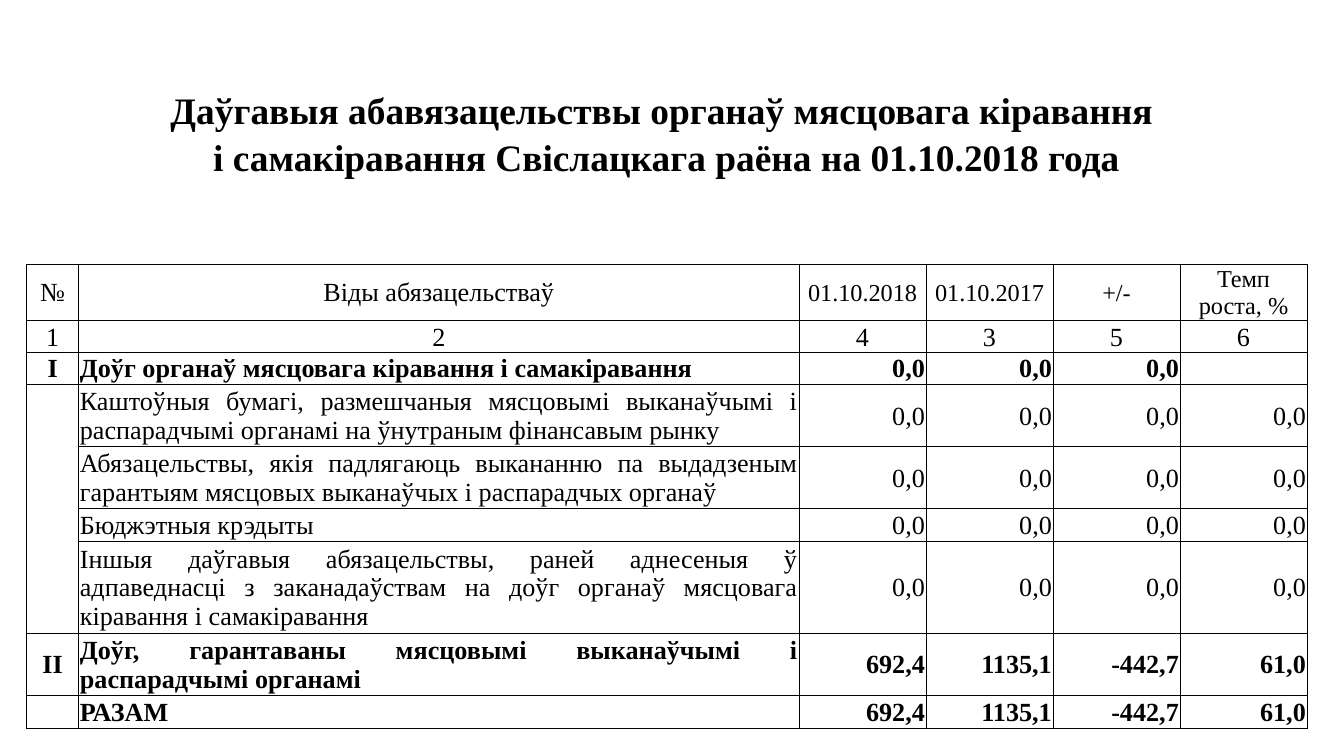
from dataclasses import dataclass

from lxml.etree import SubElement
from pptx import Presentation
from pptx.dml.color import RGBColor
from pptx.enum.text import MSO_ANCHOR as Anchor, PP_ALIGN as Align
from pptx.oxml.ns import qn
from pptx.util import Cm, Pt


@dataclass(frozen=True)
class Theme:
    font: str = "Times New Roman"
    ink: str = "000000"
    paper: str = "FFFFFF"
    title: int = 20
    body: int = 14
    heading: int = 13
    rule: float = 0.5
    plain_style: str = "{2D5ABB26-0587-4C30-8999-92F81FD0307C}"


THEME = Theme()

# Lengths in centimetres
COLS = [0.99, 13.61] + [2.4] * 4
TOP_ROWS = [0.97, 1.9, 0.97, 0.58]
DEBT_ROWS = [1.07, 0.59, 0.59, 1.17, 1.17, 0.59, 1.74, 1.17, 0.59]
TITLE_ROW, SHADED_ROW = 1, 2
HEADER_ROW = len(TOP_ROWS)
NUMBER_ROW, FIRST_ROW = HEADER_ROW + 1, HEADER_ROW + 2

TITLE = ("Даўгавыя абавязацельствы органаў мясцовага кіравання \n"
         "і самакіравання Свіслацкага раёна на 01.10.2018 года")
HEADERS = ["№", "Віды абязацельстваў", "01.10.2018", "01.10.2017", "+/-",
           "Темп\nроста, %"]
NUMBERS = ["1", "2", "4", "3", "5", "6"]
ZEROS = ["0,0"] * 4
TOTALS = ["692,4", "1135,1", "-442,7", "61,0"]
DEBTS = [
    ["I", "Доўг органаў мясцовага кіравання і самакіравання", *ZEROS[:3], ""],
    ["", "Каштоўныя бумагі, размешчаныя мясцовымі выканаўчымі і "
     "распарадчымі органамі на ўнутраным фінансавым рынку", *ZEROS],
    ["", "Абязацельствы, якія падлягаюць выкананню па выдадзеным "
     "гарантыям мясцовых выканаўчых і распарадчых органаў", *ZEROS],
    ["", "Бюджэтныя крэдыты", *ZEROS],
    ["", "Іншыя даўгавыя абязацельствы, раней аднесеныя ў адпаведнасці з "
     "заканадаўствам на доўг органаў мясцовага кіравання і самакіравання",
     *ZEROS],
    ["II", "Доўг, гарантаваны мясцовымі выканаўчымі і распарадчымі органамі",
     *TOTALS],
    ["", "РАЗАМ", *TOTALS],
]
BOLD_DEBTS = (0, 5, 6)
OPEN_DEBTS = range(1, 5)  # first column reads as one tall cell here


def write(cell, text, size=THEME.body, bold=False, align=Align.CENTER,
          anchor=Anchor.MIDDLE, spacing=None):
    cell.margin_left = cell.margin_right = cell.margin_top = Cm(0.02)
    cell.margin_bottom = 0
    cell.vertical_anchor = anchor
    tf = cell.text_frame
    for i, line in enumerate(text.split("\n")):
        p = tf.add_paragraph() if i else tf.paragraphs[0]
        p.alignment = align
        if spacing:
            p.line_spacing = spacing
        if not line:  # an empty cell keeps the type size
            SubElement(p._p, qn("a:endParaRPr"), sz=str(size * 100))
            continue
        r = p.add_run()
        r.text = line
        r.font.name, r.font.size, r.font.bold = THEME.font, Pt(size), bold
        r.font.color.rgb = RGBColor.from_string(THEME.ink)


def border(cell, sides):
    tcPr = cell._tc.get_or_add_tcPr()
    for side in "LRTB":
        shown = side in sides
        ln = SubElement(tcPr, qn(f"a:ln{side}"),
                        w=str(Pt(THEME.rule) if shown else 0))
        if shown:
            fill = SubElement(ln, qn("a:solidFill"))
            SubElement(fill, qn("a:srgbClr"), val=THEME.ink)
        else:
            SubElement(ln, qn("a:noFill"))


def shade(cell, filled):
    if filled:
        cell.fill.solid()
        cell.fill.fore_color.rgb = RGBColor.from_string(THEME.paper)
    else:
        cell.fill.background()


def add_grid(slide):
    heights = TOP_ROWS + DEBT_ROWS
    sp = slide.shapes.add_table(len(heights), len(COLS), Cm(0.5), Cm(0.53),
                                Cm(sum(COLS)), Cm(sum(heights)))
    table = sp.table
    table.first_row = table.horz_banding = False
    table._tbl.tblPr.find(qn("a:tableStyleId")).text = THEME.plain_style
    for column, width in zip(table.columns, COLS):
        column.width = Cm(width)
    for row, height in zip(table.rows, heights):
        row.height = Cm(height)
    return table


def fill_top(table):
    last = len(COLS) - 1
    for i in range(HEADER_ROW):
        table.cell(i, 0).merge(table.cell(i, last))
        for j in range(len(COLS)):
            cell = table.cell(i, j)
            text = TITLE if (i, j) == (TITLE_ROW, 0) else ""
            if text:
                write(cell, text, size=THEME.title, bold=True,
                      anchor=Anchor.BOTTOM, spacing=1.15)
            else:
                write(cell, text)
            border(cell, "B" if i == HEADER_ROW - 1 else "")
            shade(cell, i == SHADED_ROW)


def fill_headings(table):
    for j, (header, number) in enumerate(zip(HEADERS, NUMBERS)):
        head, num = table.cell(HEADER_ROW, j), table.cell(NUMBER_ROW, j)
        write(head, header, size=THEME.body if j < 2 else THEME.heading)
        write(num, number, anchor=Anchor.BOTTOM)
        for cell in (head, num):
            border(cell, "LRTB")
            shade(cell, False)


def fill_debts(table):
    aligns = [Align.CENTER, Align.JUSTIFY] + [Align.RIGHT] * 4
    for i, texts in enumerate(DEBTS):
        for j, (text, align) in enumerate(zip(texts, aligns)):
            cell = table.cell(FIRST_ROW + i, j)
            write(cell, text, bold=i in BOLD_DEBTS, align=align)
            sides = "LRTB"
            if j == 0 and i in OPEN_DEBTS:
                sides = ("LR" + "T" * (i == OPEN_DEBTS[0])
                         + "B" * (i == OPEN_DEBTS[-1]))
            border(cell, sides)
            shade(cell, j >= 2)


def main():
    prs = Presentation()
    prs.slide_width, prs.slide_height = Cm(25.4), Cm(14.29)
    slide = prs.slides.add_slide(prs.slide_layouts[6])

    # One table holds the title, the headings and the debts
    table = add_grid(slide)
    fill_top(table)
    fill_headings(table)
    fill_debts(table)

    prs.save("out.pptx")


if __name__ == "__main__":
    main()
